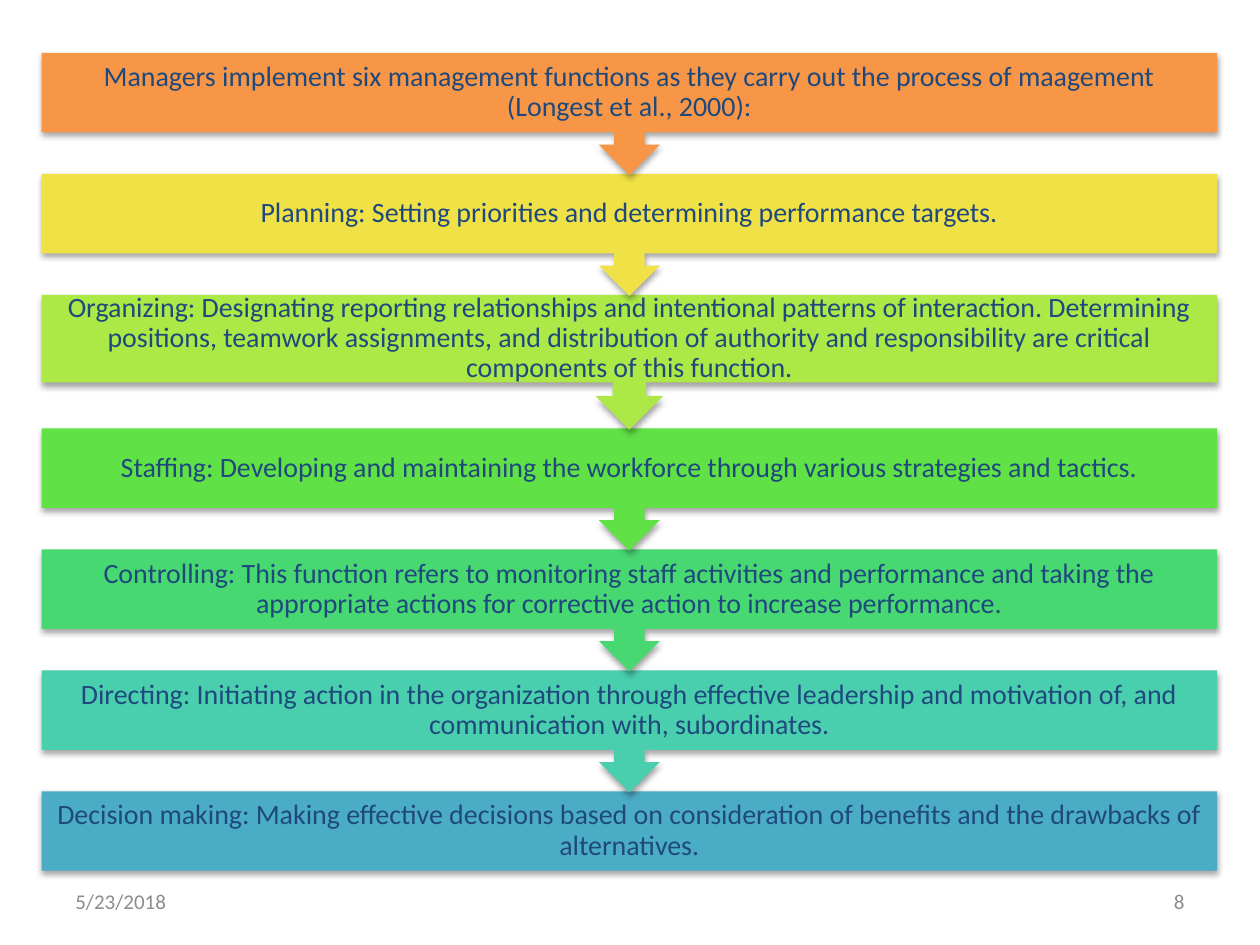
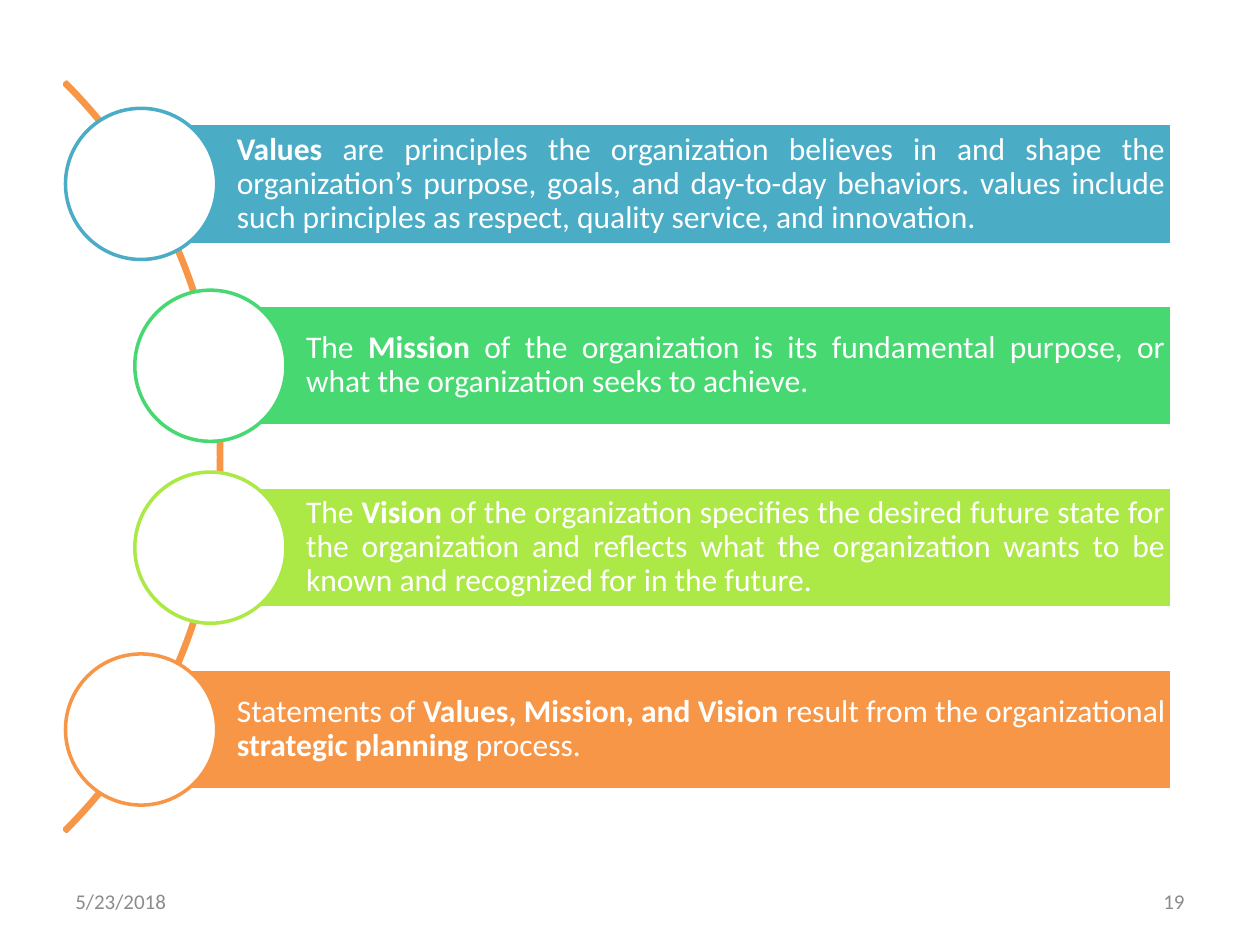
"""Build two slides: the management functions and the strategic statements."""
from dataclasses import dataclass

from lxml import etree
from pptx import Presentation
from pptx.dml.color import RGBColor
from pptx.enum.shapes import MSO_SHAPE
from pptx.enum.text import MSO_ANCHOR, PP_ALIGN
from pptx.oxml import parse_xml
from pptx.oxml.ns import nsdecls
from pptx.util import Inches, Pt

RECT = MSO_SHAPE.RECTANGLE
OVAL = MSO_SHAPE.OVAL
ARC = MSO_SHAPE.BLOCK_ARC
CALLOUT = MSO_SHAPE.UP_ARROW_CALLOUT
MIDDLE = MSO_ANCHOR.MIDDLE
LEFT, RIGHT = PP_ALIGN.LEFT, PP_ALIGN.RIGHT
CENTER, JUSTIFY = PP_ALIGN.CENTER, PP_ALIGN.JUSTIFY


@dataclass(frozen=True)
class Theme:
    font: str = "Calibri"
    white: str = "FFFFFF"
    navy: str = "1F497D"
    gray: str = "8C8C8C"
    orange: str = "F79646"
    yellow: str = "F0E146"
    lime: str = "ACE946"
    green: str = "60E146"
    mint: str = "47D872"
    teal: str = "49CFAE"
    blue: str = "4BACC6"
    foot: int = 12
    step: int = 16
    body: int = 18
    line: int = 2


THEME = Theme()
DATE = "5/23/2018"
STEPS = [
    (THEME.orange, 0.97, "Managers implement six management functions as they carry out "
     "the process of maagement (Longest et al., 2000):"),
    (THEME.yellow, 0.97, "Planning: Setting priorities and determining performance targets."),
    (THEME.lime, 1.07, "Organizing: Designating reporting relationships and intentional "
     "patterns of interaction. Determining positions, teamwork assignments, and distribution "
     "of authority and responsibility are critical components of this function."),
    (THEME.green, 0.97, "Staffing: Developing and maintaining the workforce through various "
     "strategies and tactics."),
    (THEME.mint, 0.97, "Controlling: This function refers to monitoring staff activities and "
     "performance and taking the appropriate actions for corrective action to increase "
     "performance."),
    (THEME.teal, 0.97, "Directing: Initiating action in the organization through effective "
     "leadership and motivation of, and communication with, subordinates."),
    (THEME.blue, 0.97, "Decision making: Making effective decisions based on consideration of "
     "benefits and the drawbacks of alternatives."),
]
GOALS = [
    (THEME.blue, 1.12, "*Values* are principles the organization believes in and shape the "
     "organization’s purpose, goals, and day-to-day behaviors. values include such principles "
     "as respect, quality service, and innovation."),
    (THEME.mint, 1.67, "The *Mission* of the organization is its fundamental purpose, or what "
     "the organization seeks to achieve."),
    (THEME.lime, 1.67, "The *Vision* of the organization specifies the desired future state "
     "for the organization and reflects what the organization wants to be known and "
     "recognized for in the future."),
    (THEME.orange, 1.12, "Statements of *Values, Mission, and Vision* result from the "
     "organizational *strategic planning* process."),
]


def color(code):
    """Turn a hex code into a colour."""
    return RGBColor.from_string(code)


def add_form(slide, kind, box, fill=None, line=None):
    """Add a preset shape with an optional fill and outline."""
    form = slide.shapes.add_shape(kind, *map(Inches, box))
    form.shadow.inherit = False
    if fill:
        form.fill.solid()
        form.fill.fore_color.rgb = color(fill)
    else:
        form.fill.background()
    if line:
        form.line.color.rgb = color(line)
        form.line.width = Pt(THEME.line)
    else:
        form.line.fill.background()
    return form


def add_shade(form):
    """Give a shape a soft shadow that falls straight down."""
    spot = form._element.spPr.find("{*}effectLst")
    shade = parse_xml(
        f'<a:outerShdw {nsdecls("a")} blurRad="{Pt(3.1)}" dist="{Pt(1.8)}" '
        'dir="5400000" rotWithShape="0"/>')
    tone = etree.SubElement(shade, shade.tag.replace("outerShdw", "srgbClr"), val="000000")
    etree.SubElement(tone, shade.tag.replace("outerShdw", "alpha"), val="35000")
    spot.append(shade)


def write(form, text, size, ink, align, pads=(0.1, 0.05, 0.1, 0.05), space=1.0):
    """Fill a shape with one paragraph, with bold parts between asterisks."""
    frame = form.text_frame
    frame.word_wrap = True
    frame.vertical_anchor = MIDDLE
    (frame.margin_left, frame.margin_top,
     frame.margin_right, frame.margin_bottom) = map(Inches, pads)
    para = frame.paragraphs[0]
    para.alignment = align
    para.line_spacing = space
    para.font.name = THEME.font
    para.font.size = Pt(size)
    para.font.color.rgb = color(ink)
    for rank, part in enumerate(text.split("*")):
        if part:
            run = para.add_run()
            run.text = part
            if rank % 2:
                run.font.bold = True


def add_text(slide, box, *args, **style):
    """Add a text box with one paragraph."""
    write(slide.shapes.add_textbox(*map(Inches, box)), *args, **style)


def add_page(deck, number):
    """Add a blank slide with its date and number."""
    slide = deck.slides.add_slide(deck.slide_layouts[6])
    for left, text, align in ((0.5, DATE, LEFT), (7.17, number, RIGHT)):
        add_text(slide, (left, 6.95, 2.33, 0.4), text, THEME.foot, THEME.gray, align)
    return slide


def add_step(slide, top, tall, fill, text, last):
    """Add one step of the flow, with an arrow down unless it is the last."""
    left, wide, body = 0.33, 9.33, tall * 0.65
    if last:
        form = add_form(slide, RECT, (left, top, wide, body), fill)
    else:
        form = add_form(slide, CALLOUT, (left, top, wide, tall), fill)
        form.rotation = 180
    add_shade(form)
    add_text(slide, (left, top, wide, body), text, THEME.step, THEME.navy, CENTER,
             pads=(0.12,) * 4, space=0.9)


def add_flow(slide):
    """Stack the steps from the bottom up so that each arrow lies on the next step."""
    tops = [0.42]
    for _, tall, _ in STEPS[:-1]:
        tops.append(tops[-1] + tall - 0.01)
    for top, (fill, tall, text) in reversed(list(zip(tops, STEPS))):
        add_step(slide, top, tall, fill, text, top == tops[-1])


def add_goal(slide, left, top, tint, text):
    """Add a bar of text with a ring over its left end."""
    bar = add_form(slide, RECT, (left, top, 9.3 - left, 0.96), tint, THEME.white)
    write(bar, text, THEME.body, THEME.white, JUSTIFY,
          pads=(0.76, 0.05, 0.05, 0.05), space=0.9)
    add_form(slide, OVAL, (left - 0.6, top - 0.12, 1.2, 1.2), THEME.white, tint)


def add_curve(slide):
    """Add the thin arc that links the rings."""
    arc = add_form(slide, ARC, (-6.65, -0.58, 8.41, 8.41), line=THEME.orange)
    for rank, value in enumerate((189, 27, 0.003)):
        arc.adjustments[rank] = value


def main():
    """Build and save the deck."""
    deck = Presentation()
    deck.slide_width, deck.slide_height = Inches(10), Inches(7.5)
    add_flow(add_page(deck, "8"))
    slide = add_page(deck, "19")
    add_curve(slide)
    for rank, (tint, left, text) in enumerate(GOALS):
        add_goal(slide, left, 0.98 + rank * 4.33 / 3, tint, text)
    deck.save("out.pptx")


if __name__ == "__main__":
    main()
